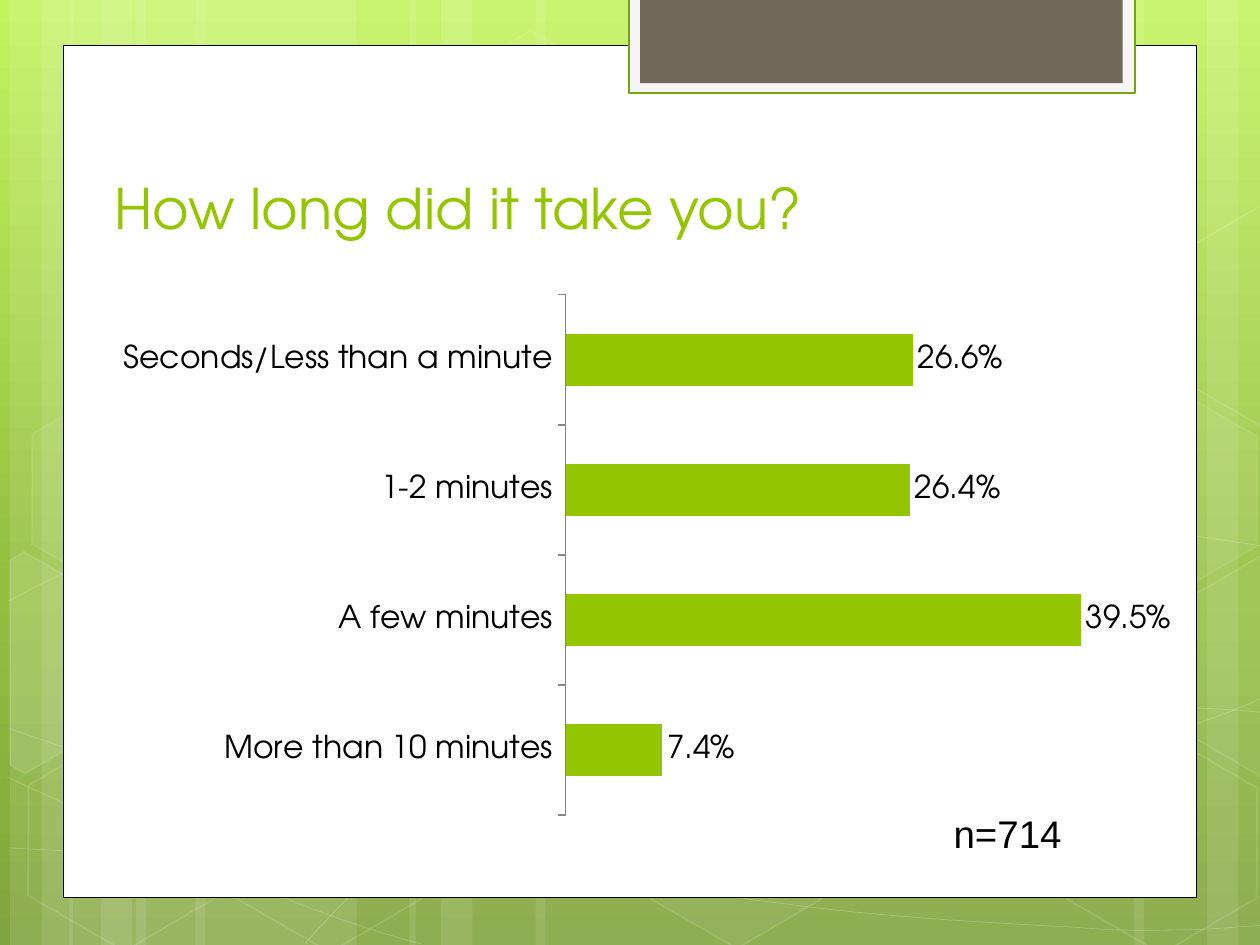
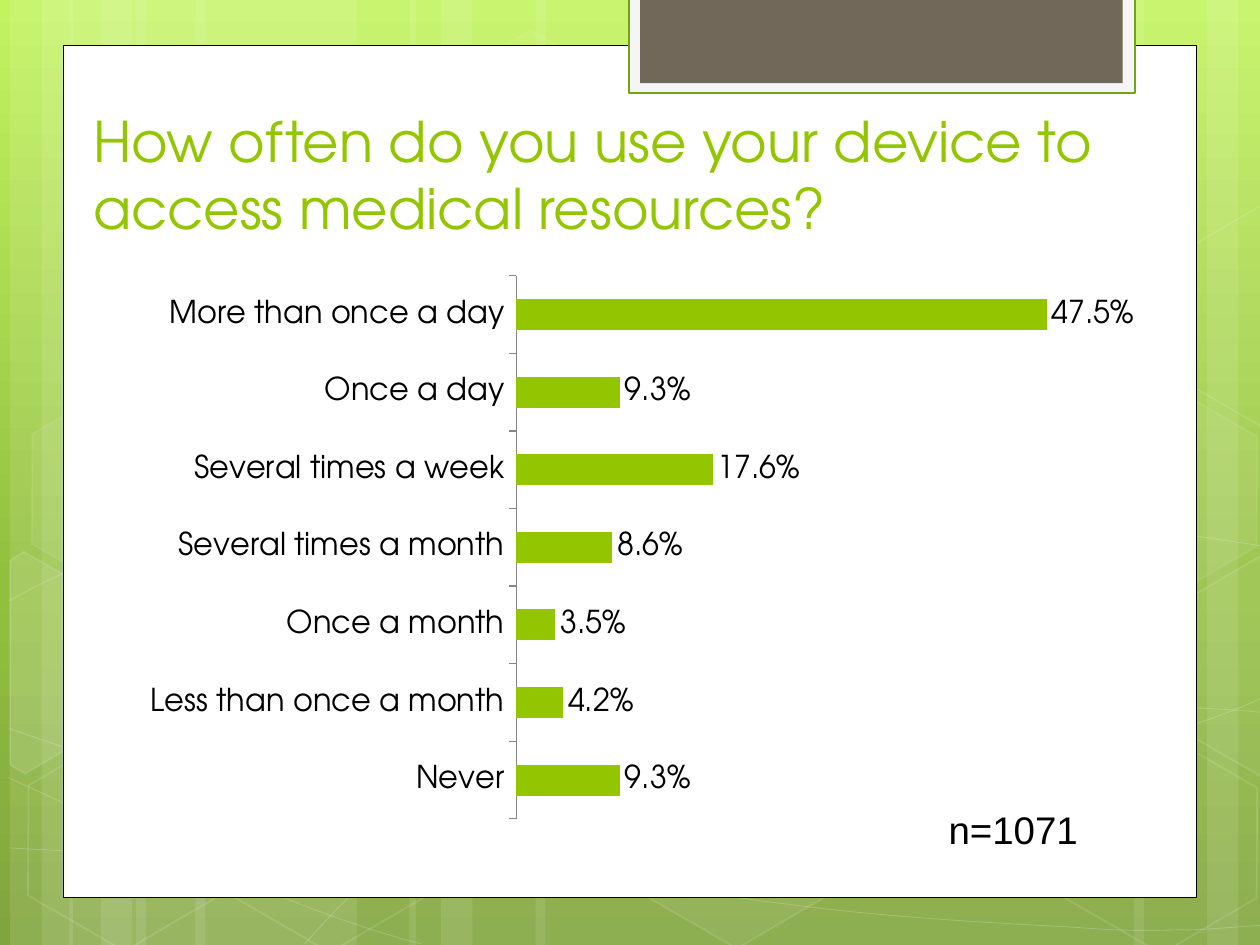
from pptx import Presentation
from pptx.chart.data import CategoryChartData
from pptx.dml.color import RGBColor
from pptx.enum.chart import XL_CHART_TYPE, XL_LABEL_POSITION, XL_TICK_MARK
from pptx.enum.shapes import MSO_SHAPE
from pptx.enum.text import MSO_ANCHOR, MSO_AUTO_SIZE
from pptx.oxml import parse_xml
from pptx.oxml.ns import nsdecls, qn
from pptx.util import Emu, Pt

RECTANGLE, HEXAGON = MSO_SHAPE.RECTANGLE, MSO_SHAPE.HEXAGON
BAR_CLUSTERED = XL_CHART_TYPE.BAR_CLUSTERED
OUTSIDE_END = XL_LABEL_POSITION.OUTSIDE_END
TICK_OUTSIDE, TICK_NONE = XL_TICK_MARK.OUTSIDE, XL_TICK_MARK.NONE
ANCHOR_TOP, ANCHOR_BOTTOM = MSO_ANCHOR.TOP, MSO_ANCHOR.BOTTOM
FIT_TEXT = MSO_AUTO_SIZE.SHAPE_TO_FIT_TEXT

EMU_PER_PX = 9144
SLIDE_WIDTH, SLIDE_HEIGHT = 1000, 750
HEADING_FONT, NOTE_FONT = "TeX Gyre Adventor", "Arial"
GREEN, WHITE, BLACK = "94C600", "FFFFFF", "000000"
DARK_GREEN, LIGHT_GRAY, BROWN, AXIS_GRAY = "74A510", "F5F5F5", "71685A", "868686"
PERCENT = "0.0%"

BACKGROUND_STOPS = [(0, "C3F35F"), (62, "93BF3F"), (100, "81A53E")]
BANDS = [(108, 175), (8, 50), (33, 83), (155, 175), (55, 50), (80, 83),
         (733, 175), (958, 50), (900, 83), (425, 308), (325, 50), (350, 83)]
CURVES = [
    [(7, 673), (61, 676), (115, 679), (190, 678), (265, 677), (358, 675), (458, 665),
     (558, 655), (700, 636), (792, 617), (883, 598), (977, 568), (1007, 551)],
    [(7, 477), (36, 461), (65, 446), (121, 431), (178, 416), (259, 394), (347, 387),
     (436, 380), (544, 379), (654, 387), (764, 395), (947, 426), (1007, 434)],
    [(6, 617), (127, 672), (247, 727), (334, 749)],
    [(7, 578), (38, 589), (70, 600), (128, 616), (186, 631), (273, 656), (357, 673),
     (440, 690), (545, 708), (628, 718), (711, 729), (800, 733), (853, 736),
     (905, 740), (919, 738), (945, 738), (971, 737), (989, 735), (1007, 734)],
    [(242, 749), (260, 729), (278, 709), (302, 691), (326, 673), (360, 653), (388, 639),
     (416, 625), (433, 619), (470, 609), (506, 599), (573, 585), (608, 578),
     (644, 571), (649, 571), (680, 569), (711, 566), (760, 563), (794, 562),
     (829, 561), (886, 562), (886, 562), (886, 562), (953, 562), (953, 562),
     (971, 563), (988, 564), (997, 565), (1006, 566), (1003, 565), (1006, 566)],
]
HEXAGONS = [(334, 36, 4, 8), (497, 589, 6, 12), (11, 591, None, 12), (14, 312, 7, 8),
            (174, 592, None, 12), (834, 593, None, 12), (834, 314, 7, 8)]
CUT_HEXAGONS = [
    ([(8, 445), (19, 438), (96, 482), (95, 570), (20, 614), (8, 607)], 10),
    ([(926, 485), (1001, 441), (1009, 446), (1009, 613), (1002, 617), (926, 573)], 4),
    ([(926, 207), (1001, 163), (1010, 168), (1009, 335), (1002, 339), (926, 295)], None),
]

SURVEY_SLIDES = [
    {
        "title": "How long did it take you?",
        "title_box": (81, 30, 819, 166),
        "sample": "n=714",
        "sample_box": (747, 638, 171, 47),
        "chart_box": (81, 225, 851, 431),
        "plot_box": (449, 234, 466, 413),
        "maximum": 0.45,
        "answers": {"Seconds/Less than a minute": 0.266, "1-2 minutes": 0.264,
                    "A few minutes": 0.395, "More than 10 minutes": 0.074},
    },
    {
        "title": "How often do you use your device to access medical resources?",
        "title_box": (64, 30, 836, 166),
        "sample": "n=1071",
        "sample_box": (743, 635, 171, 47),
        "chart_box": (106, 210, 794, 449),
        "plot_box": (421, 219, 459, 431),
        "maximum": 0.5,
        "answers": {"More than once a day": 0.475, "Once a day": 0.093,
                    "Several times a week": 0.176, "Several times a month": 0.086,
                    "Once a month": 0.035, "Less than once a month": 0.042,
                    "Never": 0.093},
    },
]


def px(length):
    return Emu(round(length * EMU_PER_PX))


def color(hex_string):
    return RGBColor.from_string(hex_string)


def set_values(target, values):
    for name, value in values.items():
        setattr(target, name, value)


def set_solid(fill, hex_string):
    fill.solid()
    fill.fore_color.rgb = color(hex_string)


def set_font(font, name, size, hex_string):
    set_values(font, {"name": name, "size": Pt(size)})
    font.color.rgb = color(hex_string)


def set_opacity(properties, percent):
    rgb = properties.find(qn("a:solidFill")).find(qn("a:srgbClr"))
    rgb.append(parse_xml(f'<a:alpha {nsdecls("a")} val="{percent * 1000}"/>'))


def style_shape(shape, fill=None, line=None, width=1, fill_opacity=None, line_opacity=None):
    shape.shadow.inherit = False
    properties = shape.element.spPr
    if fill:
        set_solid(shape.fill, fill)
        if fill_opacity:
            set_opacity(properties, fill_opacity)
    else:
        shape.fill.background()
    if line:
        set_solid(shape.line.fill, line)
        shape.line.width = Pt(width)
        if line_opacity:
            set_opacity(properties.find(qn("a:ln")), line_opacity)
    else:
        shape.line.fill.background()


def add_preset(slide, preset, box, **style):
    shape = slide.shapes.add_shape(preset, *map(px, box))
    style_shape(shape, **style)
    return shape


def add_outline(slide, points, close, **style):
    start, *others = [(px(x), px(y)) for x, y in points]
    builder = slide.shapes.build_freeform(*start)
    builder.add_line_segments(others, close=close)
    shape = builder.convert_to_shape()
    style_shape(shape, **style)
    return shape


def add_curve(slide, points, **style):
    shape = add_outline(slide, points[::3], False, **style)
    lines = list(shape.element.iter(qn("a:lnTo")))
    for index, line in enumerate(lines):
        controls = "".join(f'<a:pt x="{px(x) - shape.left}" y="{px(y) - shape.top}"/>'
                           for x, y in points[3 * index + 1:3 * index + 4])
        line.getparent().replace(line, parse_xml(
            f'<a:cubicBezTo {nsdecls("a")}>{controls}</a:cubicBezTo>'))


def add_background(slide):
    stops = "".join(f'<a:gs pos="{position * 1000}"><a:srgbClr val="{rgb}"/></a:gs>'
                    for position, rgb in BACKGROUND_STOPS)
    slide.element.cSld.insert(0, parse_xml(
        f'<p:bg {nsdecls("p", "a")}><p:bgPr><a:gradFill><a:gsLst>{stops}</a:gsLst>'
        '<a:lin ang="5400000" scaled="0"/></a:gradFill><a:effectLst/></p:bgPr></p:bg>'))


def add_pattern(slide):
    for left, width in BANDS:
        add_preset(slide, RECTANGLE, (left, 0, width, SLIDE_HEIGHT),
                   fill=WHITE, fill_opacity=10)
    for points in CURVES:
        add_curve(slide, points, line=WHITE, width=0.5, line_opacity=20)
    for left, top, fill_opacity, line_opacity in HEXAGONS:
        hexagon = add_preset(slide, HEXAGON, (left, top, 175, 152),
                             fill=WHITE if fill_opacity else None, fill_opacity=fill_opacity,
                             line=WHITE, line_opacity=line_opacity)
        hexagon.adjustments[0] = 0.285
        hexagon.rotation = 30
    for points, fill_opacity in CUT_HEXAGONS:
        add_outline(slide, points, True, fill=WHITE if fill_opacity else None,
                    fill_opacity=fill_opacity, line=WHITE, line_opacity=12)


def add_frame(slide):
    add_preset(slide, RECTANGLE, (50, 36, 900, 676), fill=WHITE, line=BLACK, width=0.5)
    add_preset(slide, RECTANGLE, (499, -2, 402, 76),
               fill=LIGHT_GRAY, line=DARK_GREEN, width=1.25)
    add_preset(slide, RECTANGLE, (508, -2, 383, 68), fill=BROWN)


def add_text(slide, box, text, font, frame_values):
    frame = slide.shapes.add_textbox(*map(px, box)).text_frame
    set_values(frame, {"word_wrap": True, **frame_values})
    run = frame.paragraphs[0].add_run()
    run.text = text
    set_font(run.font, *font)


def place_plot(chart, chart_box, plot_box):
    left, top, width, height = chart_box
    plot_left, plot_top, plot_width, plot_height = plot_box
    fractions = {"x": (plot_left - left) / width, "y": (plot_top - top) / height,
                 "w": plot_width / width, "h": plot_height / height}
    values = "".join(f'<c:{name} val="{value:.4f}"/>' for name, value in fractions.items())
    plot_area = chart.element.chart.plotArea
    for layout in plot_area.findall(qn("c:layout")):
        plot_area.remove(layout)
    plot_area.insert(0, parse_xml(
        f'<c:layout {nsdecls("c")}><c:manualLayout><c:layoutTarget val="inner"/>'
        f'<c:xMode val="edge"/><c:yMode val="edge"/>{values}</c:manualLayout></c:layout>'))


def add_answer_chart(slide, chart_box, plot_box, maximum, answers):
    data = CategoryChartData(number_format=PERCENT)
    data.categories = list(answers)
    data.add_series("Series 1", list(answers.values()))
    chart = slide.shapes.add_chart(BAR_CLUSTERED, *map(px, chart_box), data).chart
    set_values(chart, {"has_title": False, "has_legend": False})
    set_font(chart.font, HEADING_FONT, 10, BLACK)
    place_plot(chart, chart_box, plot_box)

    category_axis = chart.category_axis
    set_values(category_axis, {"reverse_order": True, "major_tick_mark": TICK_OUTSIDE,
                               "minor_tick_mark": TICK_NONE, "has_major_gridlines": False})
    set_font(category_axis.tick_labels.font, HEADING_FONT, 18, BLACK)
    set_solid(category_axis.format.line.fill, AXIS_GRAY)
    set_values(chart.value_axis, {"visible": False, "has_major_gridlines": False,
                                  "minimum_scale": 0, "maximum_scale": maximum})

    plot = chart.plots[0]
    set_values(plot, {"gap_width": 150, "vary_by_categories": False,
                      "has_data_labels": True})
    set_solid(plot.series[0].format.fill, GREEN)
    labels = plot.data_labels
    set_values(labels, {"show_value": True, "number_format": PERCENT,
                        "number_format_is_linked": False, "position": OUTSIDE_END})
    set_font(labels.font, HEADING_FONT, 18, BLACK)


def add_survey_slide(presentation, survey):
    slide = presentation.slides.add_slide(presentation.slide_layouts[6])
    add_background(slide)
    add_pattern(slide)
    add_frame(slide)
    add_answer_chart(slide, survey["chart_box"], survey["plot_box"],
                     survey["maximum"], survey["answers"])
    add_text(slide, survey["title_box"], survey["title"], (HEADING_FONT, 32, GREEN),
             {"vertical_anchor": ANCHOR_BOTTOM})
    add_text(slide, survey["sample_box"], survey["sample"], (NOTE_FONT, 22, BLACK),
             {"vertical_anchor": ANCHOR_TOP, "auto_size": FIT_TEXT})


def main():
    presentation = Presentation()
    set_values(presentation, {"slide_width": px(SLIDE_WIDTH), "slide_height": px(SLIDE_HEIGHT)})
    for survey in SURVEY_SLIDES:
        add_survey_slide(presentation, survey)
    presentation.save("out.pptx")


if __name__ == "__main__":
    main()
